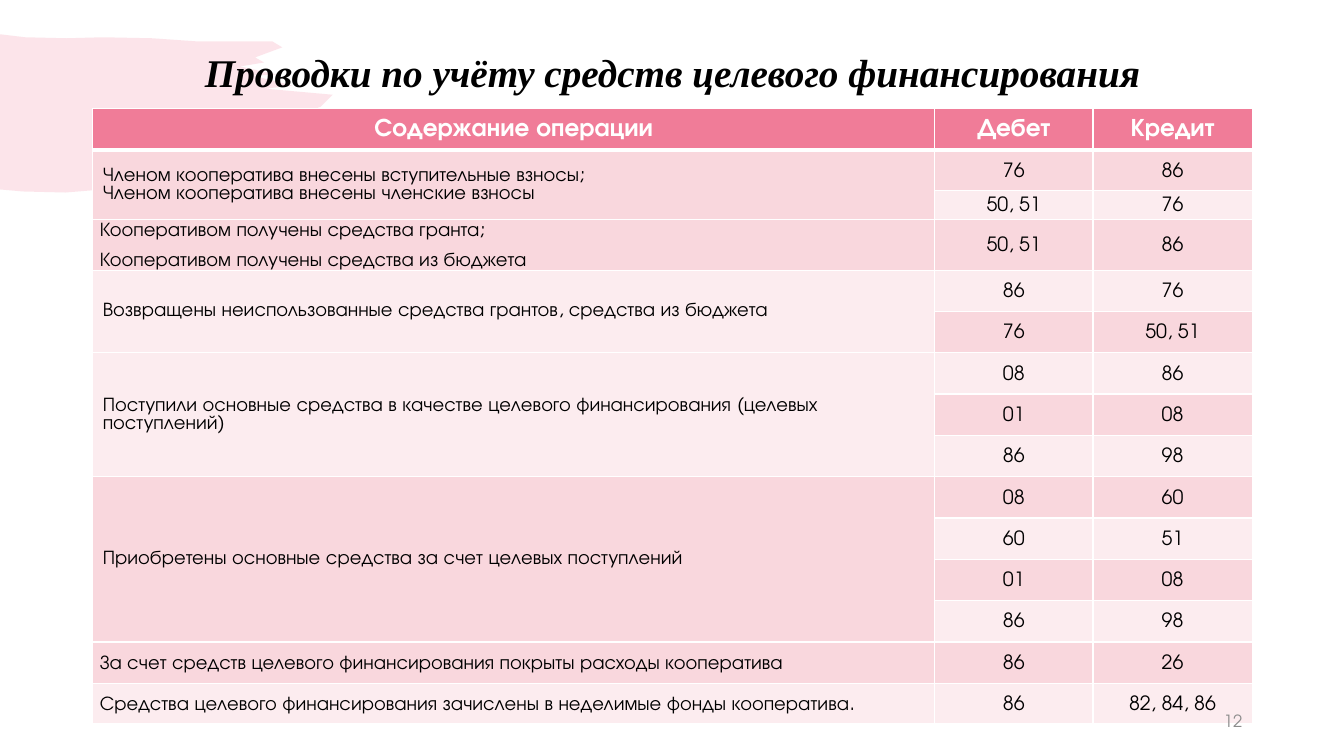
"""Build the slide with the accounting entries for targeted financing."""
from lxml import etree
from pptx import Presentation
from pptx.dml.color import RGBColor
from pptx.enum.text import MSO_ANCHOR, PP_ALIGN
from pptx.oxml.ns import qn
from pptx.util import Pt

PX = 9144
LEFT, MID, RIGHT = PP_ALIGN.LEFT, PP_ALIGN.CENTER, PP_ALIGN.RIGHT
MIDDLE = MSO_ANCHOR.MIDDLE
SANS, SERIF = "TeX Gyre Adventor", "Times New Roman"
ROSE, PINK, PALE = "F07C98", "F9D7DD", "FCECEF"
WHITE, BLACK, GREY = "FFFFFF", "000000", "8C8C8C"


def color(code):
    return RGBColor.from_string(code)


def write(para, text, size, code, align, face=SANS, bold=False, slant=False):
    para.alignment = align
    run = para.add_run()
    run.text = text
    font = run.font
    font.name, font.size, font.bold, font.italic = face, Pt(size), bold, slant
    font.color.rgb = color(code)


prs = Presentation()
prs.slide_width, prs.slide_height = 1333 * PX, 750 * PX
slide = prs.slides.add_slide(prs.slide_layouts[5])
shapes = slide.shapes

title = shapes.title
title.left, title.top, title.width, title.height = 92 * PX, 40 * PX, 1150 * PX, 68 * PX
title.text_frame.vertical_anchor = MIDDLE
head = title.text_frame.paragraphs[0]
head.line_spacing = 0.9
write(head, "Проводки по учёту средств целевого финансирования",
      28, BLACK, MID, SERIF, True, True)

edge = [
    (25, 37), (66, 38), (102, 37), (151, 38), (194, 41), (248, 41), (270, 41),
    (280, 47), (253, 57), (262, 62), (238, 66), (275, 74), (251, 75),
    (290, 85), (263, 88), (330, 94), (318, 106), (280, 120), (274, 128),
    (308, 128), (269, 138), (252, 148), (263, 148), (197, 172), (102, 188),
    (65, 191), (23, 190), (0, 188),
]
pen = shapes.build_freeform(0, 34, scale=PX)
pen.add_line_segments(edge)
brush = pen.convert_to_shape()
brush.shadow.inherit = False
brush.line.fill.background()
brush.fill.solid()
brush.fill.fore_color.rgb = color(ROSE)
tint = brush.element.find(".//" + qn("a:srgbClr"))
etree.SubElement(tint, qn("a:alpha"), val="20000")
shapes.element.insert(2, brush.element)

groups = [
    (["Членом кооператива внесены вступительные взносы;",
      "Членом кооператива внесены членские взносы"],
     [("76", "86"), ("50, 51", "76")]),
    (["Кооперативом получены средства гранта;",
      "Кооперативом получены средства из бюджета"],
     [("50, 51", "86")]),
    (["Возвращены неиспользованные средства грантов, средства из бюджета"],
     [("86", "76"), ("76", "50, 51")]),
    (["Поступили основные средства в качестве целевого финансирования "
      "(целевых поступлений)"],
     [("08", "86"), ("01", "08"), ("86", "98")]),
    (["Приобретены основные средства за счет целевых поступлений"],
     [("08", "60"), ("60", "51"), ("01", "08"), ("86", "98")]),
    (["За счет средств целевого финансирования покрыты расходы кооператива"],
     [("86", "26")]),
    (["Средства целевого финансирования зачислены в неделимые фонды "
      "кооператива."],
     [("86", "82, 84, 86")]),
]
highs = [41, 40, 29, 50] + [41] * 10 + [40]
wides = [835, 157, 158]
grid = shapes.add_table(len(highs), len(wides), 92 * PX, 108 * PX,
                        sum(wides) * PX, sum(highs) * PX).table
for col, wide in zip(grid.columns, wides):
    col.width = wide * PX
for row, high in zip(grid.rows, highs):
    row.height = high * PX

for r in range(len(highs)):
    for c in range(len(wides)):
        cell = grid.cell(r, c)
        cell.vertical_anchor = MIDDLE
        props = cell._tc.get_or_add_tcPr()
        for side in "LRTB":
            thick = (r, side) in ((0, "B"), (1, "T"))
            line = etree.SubElement(props, qn("a:ln" + side), w=str(Pt(3 if thick else 1)))
            fill = etree.SubElement(line, qn("a:solidFill"))
            etree.SubElement(fill, qn("a:srgbClr"), val=WHITE)
        cell.fill.solid()
        cell.fill.fore_color.rgb = color(ROSE if r == 0 else PINK if r % 2 else PALE)

for c, name in enumerate(("Содержание операции", "Дебет", "Кредит")):
    write(grid.cell(0, c).text_frame.paragraphs[0], name, 18, WHITE, MID, bold=True)

top = 1
for lines, pairs in groups:
    entries = [(top, 0, lines)]
    for r, pair in enumerate(pairs, top):
        entries += [(r, c, [code]) for c, code in enumerate(pair, 1)]
    for r, c, texts in entries:
        cell = grid.cell(r, c)
        tight = c > 0 or len(pairs) == 1
        if tight:
            cell.margin_left = cell.margin_right = 7 * PX
            cell.margin_top = cell.margin_bottom = 0
        for n, text in enumerate(texts):
            para = cell.text_frame.add_paragraph() if n else cell.text_frame.paragraphs[0]
            write(para, text, 14, BLACK, MID if c else LEFT)
            if tight:
                para.line_spacing = 1.15
                para.space_before = para.space_after = Pt(0 if n else 6)
    if len(pairs) > 1:
        grid.cell(top, 0).merge(grid.cell(top + len(pairs) - 1, 0))
    top += len(pairs)

page = shapes.add_textbox(942 * PX, 695 * PX, 300 * PX, 40 * PX).text_frame
page.word_wrap = True
page.vertical_anchor = MIDDLE
write(page.paragraphs[0], "12", 12, GREY, RIGHT)

prs.save("out.pptx")
